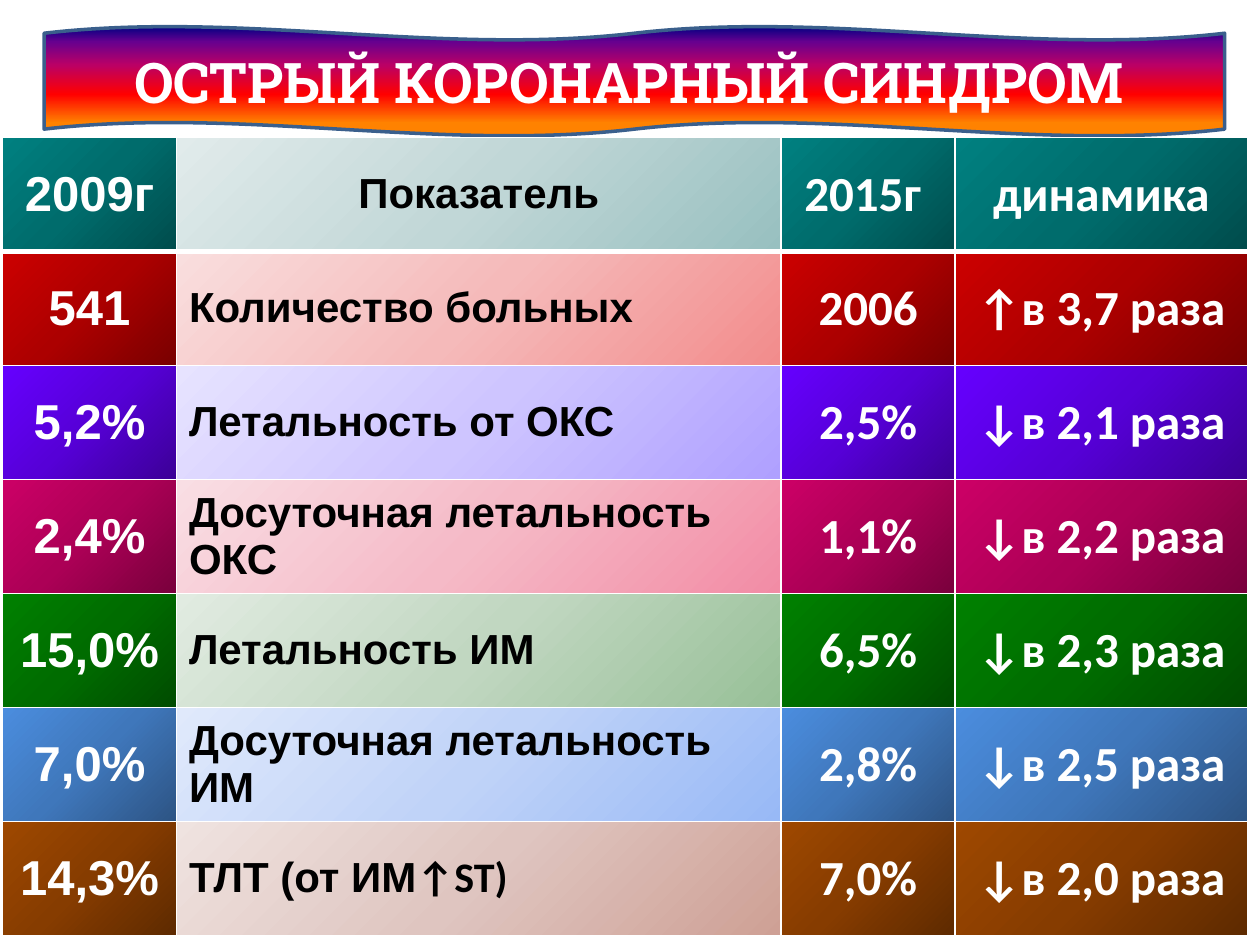
from lxml import etree
from pptx import Presentation
from pptx.dml.color import RGBColor
from pptx.enum.shapes import MSO_SHAPE
from pptx.enum.text import MSO_ANCHOR, PP_ALIGN
from pptx.oxml.ns import qn
from pptx.util import Inches, Pt

CENTER, LEFT = PP_ALIGN.CENTER, PP_ALIGN.LEFT
MIDDLE = MSO_ANCHOR.MIDDLE

# Content
TITLE = "ОСТРЫЙ КОРОНАРНЫЙ СИНДРОМ "
ROWS = [
    ("2009г", "Показатель", "2015г ", "динамика"),
    ("541", "Количество больных", "2006", "↑в 3,7 раза"),
    ("5,2%", "Летальность от ОКС", "2,5%", "↓в 2,1 раза"),
    ("2,4%", "Досуточная летальность ОКС", "1,1%", "↓в 2,2 раза"),
    ("15,0%", "Летальность ИМ", "6,5%", "↓в 2,3 раза"),
    ("7,0%", "Досуточная летальность ИМ", "2,8%", "↓в 2,5 раза"),
    ("14,3%", ("ТЛТ (от ИМ", "↑ST)"), "7,0%", "↓в 2,0 раза"),
]
COLORS = {"white": "FFFFFF", "black": "000000", "outline": "3A5F8C"}
BANNER_STOPS = [(0, "000082"), (14, "66008F"), (35, "BA0066"), (62, "FF0000"), (88, "FF8200")]
# Per row: dark gradient for the values, light gradient for the indicator
ROW_GRADIENTS = [
    (("004C4C", "006C6C", "008080"), ("98C0C0", "C1D7D7", "E1EBEB")),
    (("790000", "AC0000", "CC0000"), ("F28C8C", "F5BABA", "F9DEDE")),
    (("3C0097", "5600D7", "6600FF"), ("AFA0FF", "CEC5FF", "E7E3FF")),
    (("79003C", "AC0056", "CC0066"), ("F28CA5", "F5BAC7", "F9DEE4")),
    (("004C00", "006C00", "008000"), ("98C098", "C1D7C1", "E1EBE1")),
    (("2D5484", "3F77BB", "4B8DDE"), ("98B9F6", "C0D3F8", "E0E9FB")),
    (("5E2A00", "863C00", "9E4800"), ("CEA095", "DFC5C0", "EFE3E0")),
]
# Per column: width, font, size, colour
COLUMNS = [
    (1.38, "Arial", 28, "white"),
    (4.80, "Arial", 24, "black"),
    (1.38, "Calibri", 28, "white"),
    (2.32, "Calibri", 28, "white"),
]
INDICATOR = 1
ROW_HEIGHT = 0.905


def gradient(stops, angle):
    fill = etree.Element(qn("a:gradFill"), rotWithShape="1")
    stop_list = etree.SubElement(fill, qn("a:gsLst"))
    for position, color in stops:
        stop = etree.SubElement(stop_list, qn("a:gs"), pos=str(position * 1000))
        etree.SubElement(stop, qn("a:srgbClr"), val=color)
    etree.SubElement(fill, qn("a:lin"), ang=str(angle * 60000), scaled="0")
    return fill


def set_font(font, name, size, color):
    font.name, font.size, font.bold = name, Pt(size), True
    font.color.rgb = RGBColor.from_string(COLORS[color])


def add_borders(properties, header):
    for side in ("L", "R", "T", "B"):
        width = 3 if header and side == "B" else 1
        line = etree.SubElement(properties, qn(f"a:ln{side}"), w=str(Pt(width)))
        fill = etree.SubElement(line, qn("a:solidFill"))
        etree.SubElement(fill, qn("a:srgbClr"), val=COLORS["white"])


presentation = Presentation()
presentation.slide_width, presentation.slide_height = Inches(10), Inches(7.5)
slide = presentation.slides.add_slide(presentation.slide_layouts[6])

# Title banner
banner = slide.shapes.add_shape(
    MSO_SHAPE.DOUBLE_WAVE, Inches(0.35), Inches(0.21), Inches(9.37), Inches(0.87))
banner.shadow.inherit = False
banner.element.spPr.insert(2, gradient(BANNER_STOPS, 90))
banner.line.color.rgb = RGBColor.from_string(COLORS["outline"])
banner.line.width = Pt(2)
banner.text_frame.text = TITLE
banner.text_frame.vertical_anchor = MIDDLE
paragraph = banner.text_frame.paragraphs[0]
paragraph.alignment = CENTER
set_font(paragraph.font, "Roboto Slab", 32, "white")

# Comparison table
table = slide.shapes.add_table(
    len(ROWS), len(COLUMNS), Inches(0.02), Inches(1.09),
    Inches(sum(column[0] for column in COLUMNS)), Inches(ROW_HEIGHT * len(ROWS))).table
for column, (width, *_) in zip(table.columns, COLUMNS):
    column.width = Inches(width)

for row_index, (texts, (dark, light)) in enumerate(zip(ROWS, ROW_GRADIENTS)):
    header = row_index == 0
    table.rows[row_index].height = Inches(ROW_HEIGHT)
    for column_index, (text, (_, name, size, color)) in enumerate(zip(texts, COLUMNS)):
        cell = table.cell(row_index, column_index)
        cell.vertical_anchor = MIDDLE
        indicator = column_index == INDICATOR
        paragraph = cell.text_frame.paragraphs[0]
        paragraph.alignment = LEFT if indicator and not header else CENTER
        if isinstance(text, tuple):
            for part, part_font in zip(text, (name, "Calibri")):
                run = paragraph.add_run()
                run.text = part
                set_font(run.font, part_font, size, color)
        else:
            paragraph.text = text
            set_font(paragraph.font, name, size, color)
        properties = cell._tc.get_or_add_tcPr()
        add_borders(properties, header)
        properties.append(gradient(zip((0, 50, 100), light if indicator else dark), 225))

presentation.save("out.pptx")
